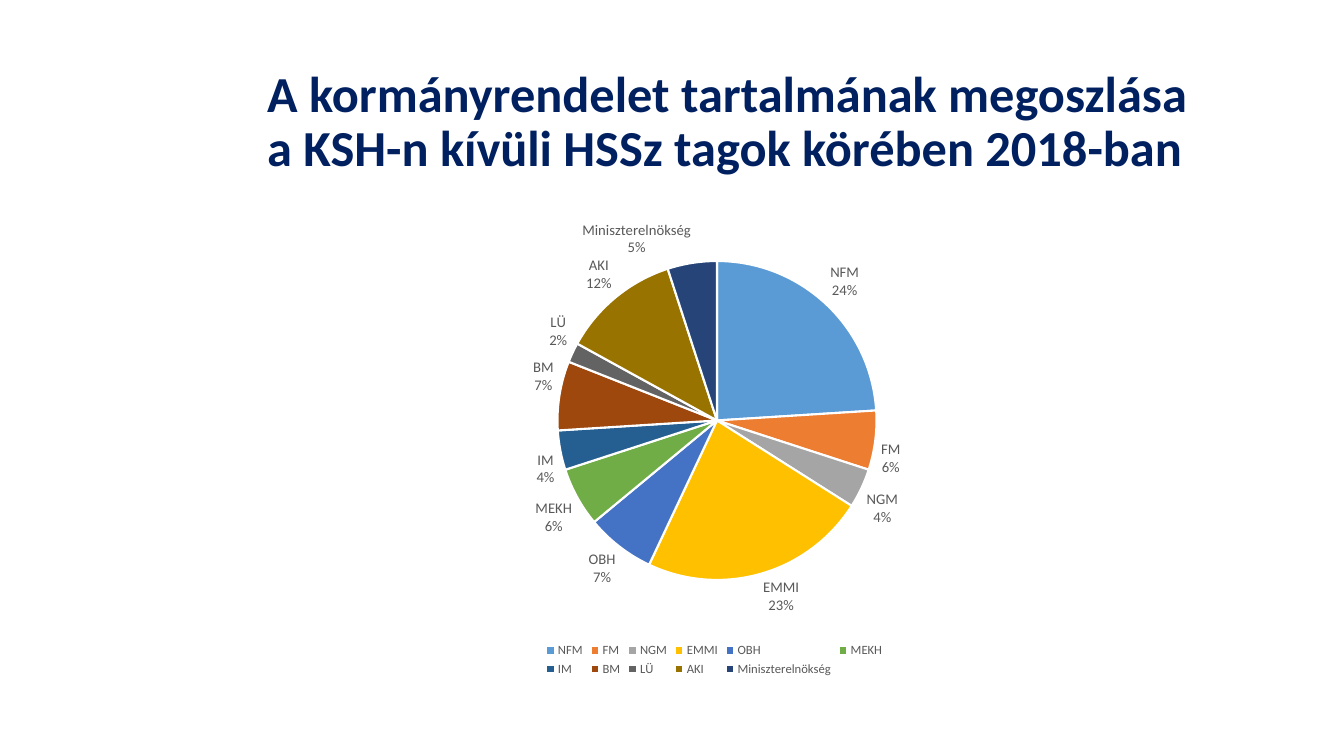
import pptx
import pptx.chart.data
import pptx.dml.color
import pptx.enum.chart
import pptx.enum.text
import pptx.util

RGBColor = pptx.dml.color.RGBColor
NAVY = RGBColor(0x00, 0x20, 0x60)
GREY = RGBColor(0x59, 0x59, 0x59)
WHITE = RGBColor(0xFF, 0xFF, 0xFF)
FONT = "Calibri"

TITLE = "A kormányrendelet tartalmának megoszlása a KSH-n kívüli HSSz tagok körében 2018-ban"
SHARES = [
    ("NFM", 24, RGBColor(0x5B, 0x9B, 0xD5)),
    ("FM", 6, RGBColor(0xED, 0x7D, 0x31)),
    ("NGM", 4, RGBColor(0xA5, 0xA5, 0xA5)),
    ("EMMI", 23, RGBColor(0xFF, 0xC0, 0x00)),
    ("OBH", 7, RGBColor(0x44, 0x72, 0xC4)),
    ("MEKH", 6, RGBColor(0x70, 0xAD, 0x47)),
    ("IM", 4, RGBColor(0x25, 0x5E, 0x91)),
    ("BM", 7, RGBColor(0x9E, 0x48, 0x0E)),
    ("LÜ", 2, RGBColor(0x63, 0x63, 0x63)),
    ("AKI", 12, RGBColor(0x99, 0x73, 0x00)),
    ("Miniszterelnökség", 5, RGBColor(0x26, 0x44, 0x78)),
]
SLIDE_SIZE = (13.33, 7.5)
TITLE_AREA = (2.55, 0.76, 9.34, 0.92)
CHART_AREA = (2.55, 2.05, 9.07, 4.7)


def inches(lengths):
    return [pptx.util.Inches(length) for length in lengths]


def style_font(font, size, colour):
    font.name = FONT
    font.size = pptx.util.Pt(size)
    font.color.rgb = colour


def add_title(page):
    title = page.shapes.title
    title.left, title.top, title.width, title.height = inches(TITLE_AREA)
    frame = title.text_frame
    frame.text = TITLE
    frame.word_wrap = True
    frame.auto_size = pptx.enum.text.MSO_AUTO_SIZE.NONE
    frame.vertical_anchor = pptx.enum.text.MSO_ANCHOR.MIDDLE
    para = frame.paragraphs[0]
    para.alignment = pptx.enum.text.PP_ALIGN.LEFT
    para.line_spacing = 0.9
    span = para.runs[0]
    style_font(span.font, 36, NAVY)
    span.font.bold = True


def add_pie(page):
    data = pptx.chart.data.CategoryChartData()
    data.categories = [name for name, _, _ in SHARES]
    data.add_series("Series 1", [share for _, share, _ in SHARES])
    chart = page.shapes.add_chart(
        pptx.enum.chart.XL_CHART_TYPE.PIE, *inches(CHART_AREA), data).chart
    chart.has_title = False
    style_font(chart.font, 10, GREY)

    chart.has_legend = True
    chart.legend.position = pptx.enum.chart.XL_LEGEND_POSITION.BOTTOM
    chart.legend.include_in_layout = False
    style_font(chart.legend.font, 9, GREY)

    plot = chart.plots[0]
    plot.vary_by_categories = True
    series = plot.series[0]
    for index, (_, _, colour) in enumerate(SHARES):
        wedge = series.points[index].format
        wedge.fill.solid()
        wedge.fill.fore_color.rgb = colour
        wedge.line.color.rgb = WHITE
        wedge.line.width = pptx.util.Pt(1.5)

    labels = series.data_labels
    labels.show_category_name = True
    labels.show_percentage = True
    labels.show_value = False
    labels.position = pptx.enum.chart.XL_LABEL_POSITION.OUTSIDE_END
    style_font(labels.font, 10.5, GREY)


def main():
    deck = pptx.Presentation()
    deck.slide_width, deck.slide_height = inches(SLIDE_SIZE)
    page = deck.slides.add_slide(deck.slide_layouts.get_by_name("Title Only"))
    add_title(page)
    add_pie(page)
    deck.save("out.pptx")


if __name__ == "__main__":
    main()
